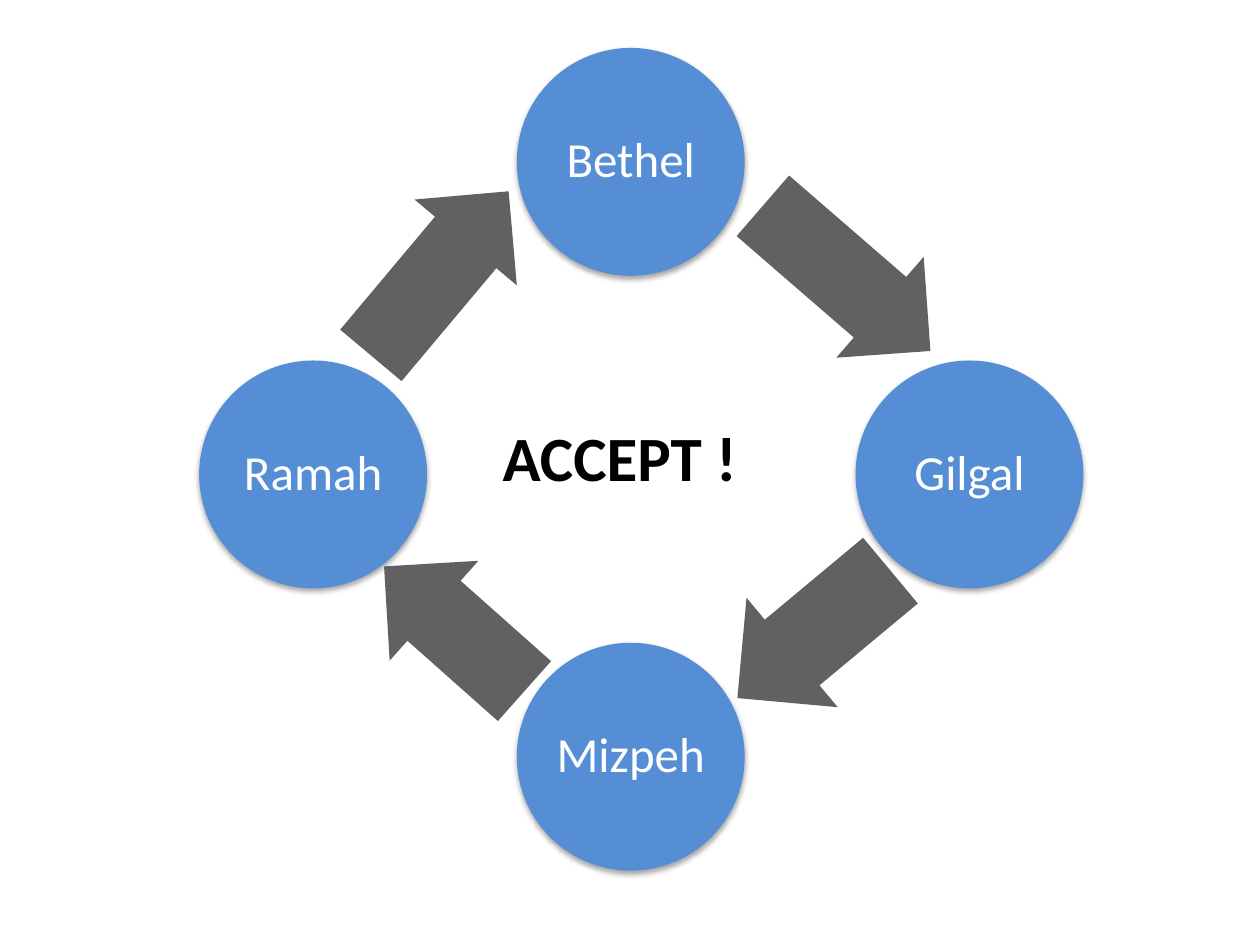
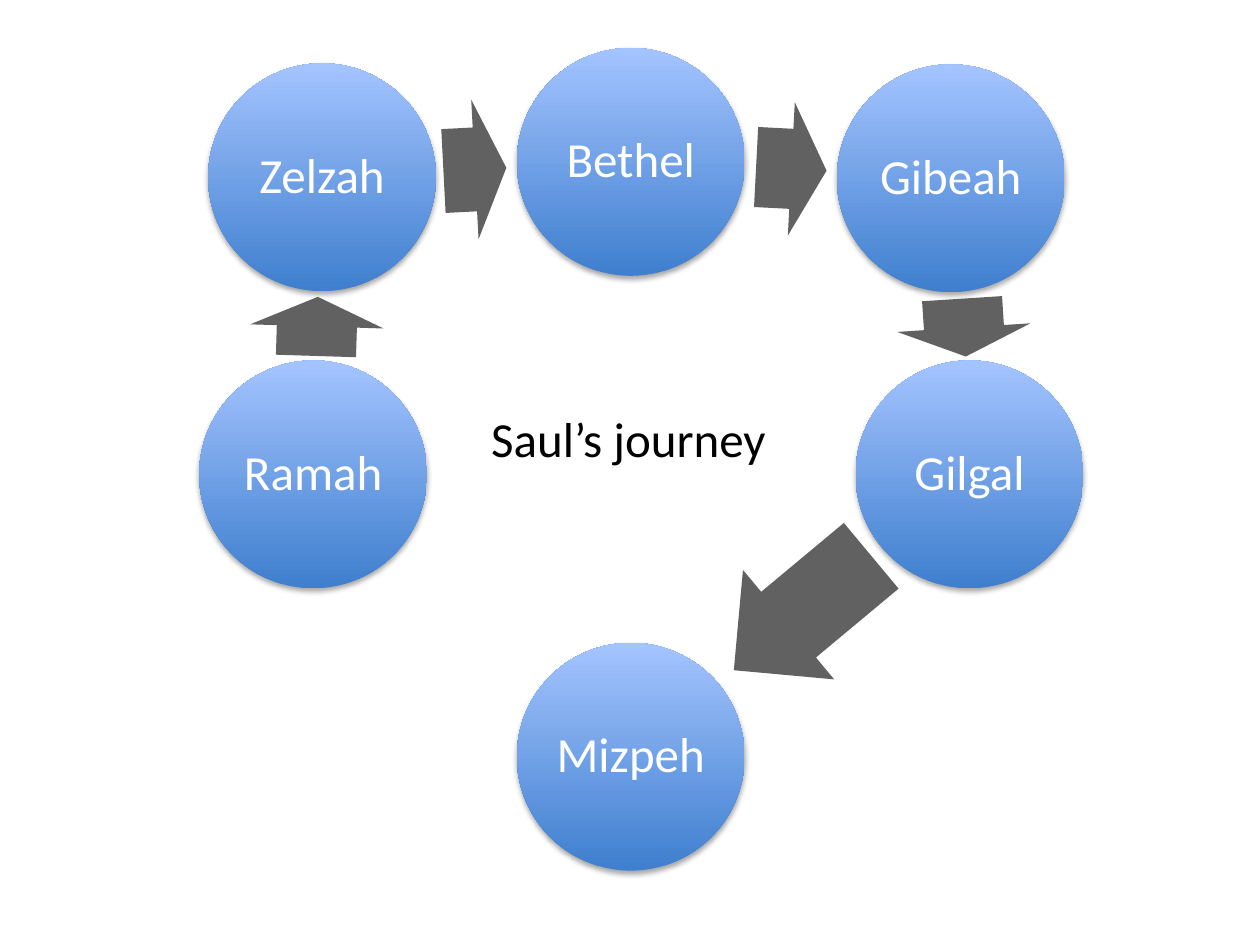
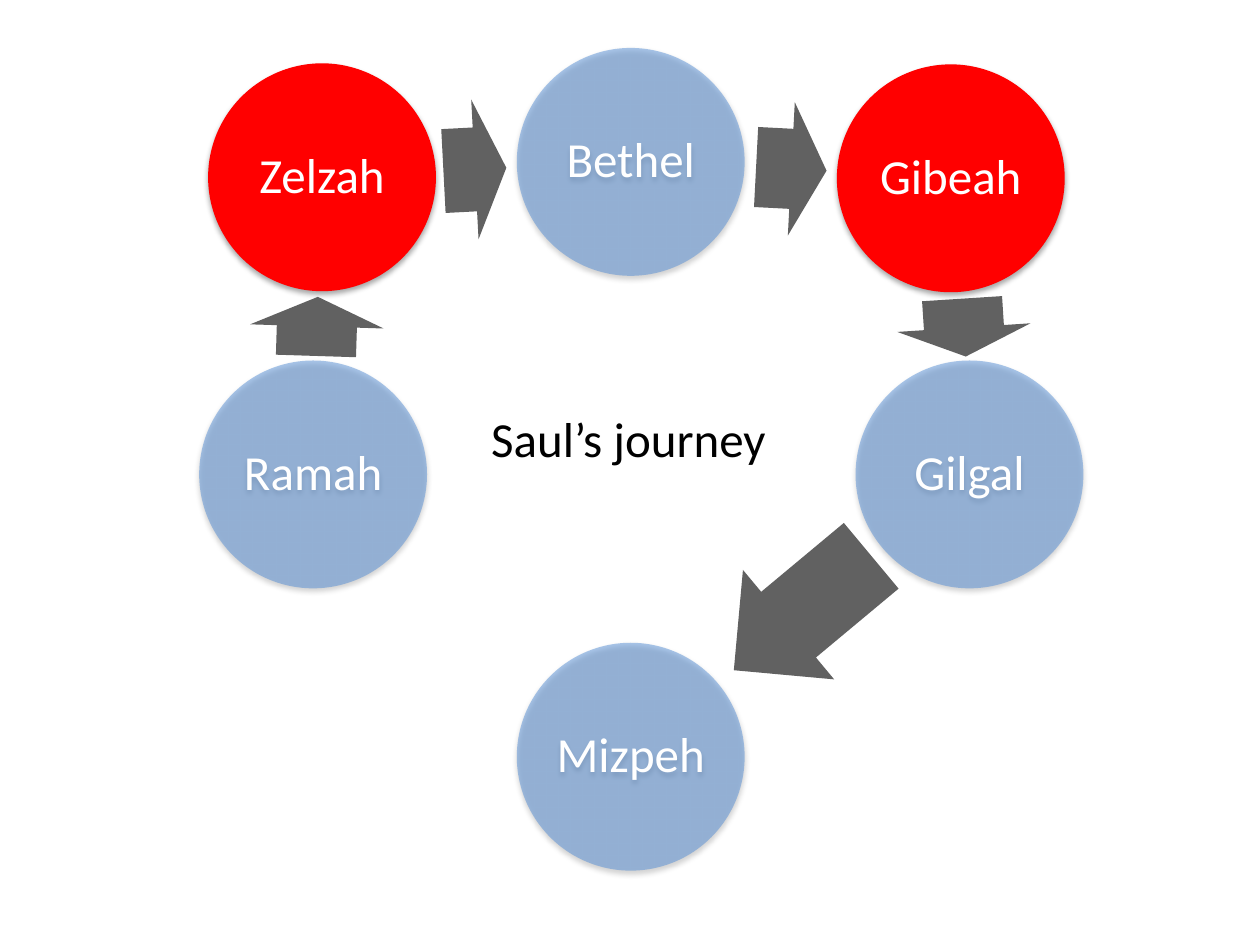
from dataclasses import dataclass
from typing import NamedTuple

from lxml import etree
from pptx import Presentation
from pptx.dml.color import RGBColor
from pptx.enum import shapes, text
from pptx.oxml import ns
from pptx.util import Pt


@dataclass(frozen=True)
class Theme:
    font: str = "Calibri"
    blue: str = "558ED5"
    gradient: tuple = ("3F7FCE", "A4C4FF")
    red: str = "FF0000"
    arrow: str = "595959"
    label: str = "FFFFFF"
    caption: str = "000000"
    shadow: str = "000000"
    body_size: float = 28
    accent_size: float = 36


class Box(NamedTuple):
    left: float
    top: float
    width: float
    height: float


class Arrow(NamedTuple):
    x: float
    y: float
    length: float
    thickness: float
    angle: float


THEME = Theme()
DIAGRAM = Box(113.6, 27.4, 506, 470)
DIAMETER = 130.2

# Centres of the places, relative to the diagram box
PLACES = {
    "Bethel": (246.8, 65.1),
    "Gibeah": (429.7, 74.5),
    "Gilgal": (440.4, 243.7),
    "Mizpeh": (246.8, 405),
    "Ramah": (65.3, 243.7),
    "Zelzah": (70.4, 73.9),
}
CIRCUIT = ("Bethel", "Gilgal", "Mizpeh", "Ramah")
CIRCUIT_ARROWS = (
    Arrow(370.2, 131.7, 126.7, 76.3, 40.9),
    Arrow(351.5, 335.1, 113.8, 81.4, 140.2),
    Arrow(146, 331.9, 107.3, 76.3, 221.6),
    Arrow(137.7, 128.8, 122.4, 76.3, 310),
)
JOURNEY_ARROWS = (
    Arrow(338.6, 69.1, 40.3, 76.3, 3),
    Arrow(437.2, 159.8, 33.1, 76.3, 86.3),
    Arrow(345, 322.9, 102.2, 81.4, 140.2),
    Arrow(67.5, 159.1, 33.8, 76.3, 271.8),
    Arrow(157.8, 69.4, 36, 79.9, 357),
)


def set_solid(shape, color, opacity=100):
    shape.fill.solid()
    shape.fill.fore_color.rgb = RGBColor.from_string(color)
    if opacity < 100:
        color_element = shape._element.spPr.find(ns.qn("a:solidFill"))[0]
        etree.SubElement(color_element, ns.qn("a:alpha"), val=str(opacity * 1000))


def set_gradient(shape):
    shape.fill.gradient()
    shape.fill.gradient_angle = 90
    for stop, color in zip(shape.fill.gradient_stops, THEME.gradient):
        stop.color.rgb = RGBColor.from_string(color)


def add_soft_shadow(shape):
    effects = shape._element.spPr.find(ns.qn("a:effectLst"))
    shadow = etree.SubElement(
        effects, ns.qn("a:outerShdw"), blurRad=str(Pt(3.1)), dist=str(Pt(1.8)),
        dir="5400000", rotWithShape="0")
    color = etree.SubElement(shadow, ns.qn("a:srgbClr"), val=THEME.shadow)
    etree.SubElement(color, ns.qn("a:alpha"), val="35000")


def add_run(paragraph, words, size, color, bold=False):
    run = paragraph.add_run()
    run.text = words
    run.font.name = THEME.font
    run.font.size = Pt(size)
    run.font.bold = bold
    run.font.color.rgb = RGBColor.from_string(color)


def add_centered_shape(slide, kind, box, center, width, height):
    """Add a flat, unoutlined shape whose centre is relative to the box."""
    left = box.left + center[0] - width / 2
    top = box.top + center[1] - height / 2
    shape = slide.shapes.add_shape(kind, Pt(left), Pt(top), Pt(width), Pt(height))
    shape.shadow.inherit = False
    shape.line.fill.background()
    return shape


def add_place(slide, box, name, paint):
    circle = add_centered_shape(
        slide, shapes.MSO_SHAPE.OVAL, box, PLACES[name], DIAMETER, DIAMETER)
    paint(circle)
    add_soft_shadow(circle)
    frame = circle.text_frame
    frame.margin_left = frame.margin_right = Pt(2.8)
    frame.margin_top = frame.margin_bottom = Pt(2.8)
    frame.vertical_anchor = text.MSO_ANCHOR.MIDDLE
    paragraph = frame.paragraphs[0]
    paragraph.alignment = text.PP_ALIGN.CENTER
    paragraph.line_spacing = 0.9
    paragraph.space_after = Pt(9.8)
    add_run(paragraph, name, THEME.body_size, THEME.label)


def add_arrow(slide, box, arrow):
    shape = add_centered_shape(
        slide, shapes.MSO_SHAPE.RIGHT_ARROW, box, (arrow.x, arrow.y),
        arrow.length, arrow.thickness)
    shape.rotation = arrow.angle
    shape.adjustments[0] = 0.6
    shape.adjustments[1] = 0.5
    set_solid(shape, THEME.arrow, 95)


def add_caption(slide, box, words, place, size, bold=False):
    caption = slide.shapes.add_textbox(
        Pt(box.left + place.left), Pt(box.top + place.top),
        Pt(place.width), Pt(place.height))
    frame = caption.text_frame
    frame.word_wrap = True
    frame.auto_size = text.MSO_AUTO_SIZE.SHAPE_TO_FIT_TEXT
    add_run(frame.paragraphs[0], words, size, THEME.caption, bold)


def add_cycle(slide, box, names, arrows, paint_for):
    """Draw the places and arrows; paint_for gives the fill function of a place."""
    for name in names:
        add_place(slide, box, name, paint_for(name))
    for arrow in arrows:
        add_arrow(slide, box, arrow)


def build_circuit(slide, box):
    add_cycle(slide, box, CIRCUIT, CIRCUIT_ARROWS,
              lambda name: lambda circle: set_solid(circle, THEME.blue))
    add_caption(slide, box, "ACCEPT !", Box(166.5, 208, 182.2, 51.1),
                THEME.accent_size, bold=True)


def build_journey(slide, box, highlights=()):
    """Draw Saul's journey; highlighted places turn red and the others fade."""
    def paint_for(name):
        if not highlights:
            return set_gradient
        if name in highlights:
            return lambda circle: set_solid(circle, THEME.red)
        return lambda circle: set_solid(circle, THEME.blue, 50)

    add_cycle(slide, box, PLACES, JOURNEY_ARROWS, paint_for)
    add_caption(slide, box, "Saul’s journey", Box(160, 202.3, 190.8, 41),
                THEME.body_size)


def main():
    presentation = Presentation()
    presentation.slide_width = Pt(720)
    presentation.slide_height = Pt(540)
    blank = presentation.slide_layouts[6]
    build_circuit(presentation.slides.add_slide(blank), DIAGRAM)
    for highlights in ((), ("Zelzah", "Gibeah")):
        build_journey(presentation.slides.add_slide(blank), DIAGRAM, highlights)
    presentation.save("out.pptx")


if __name__ == "__main__":
    main()
